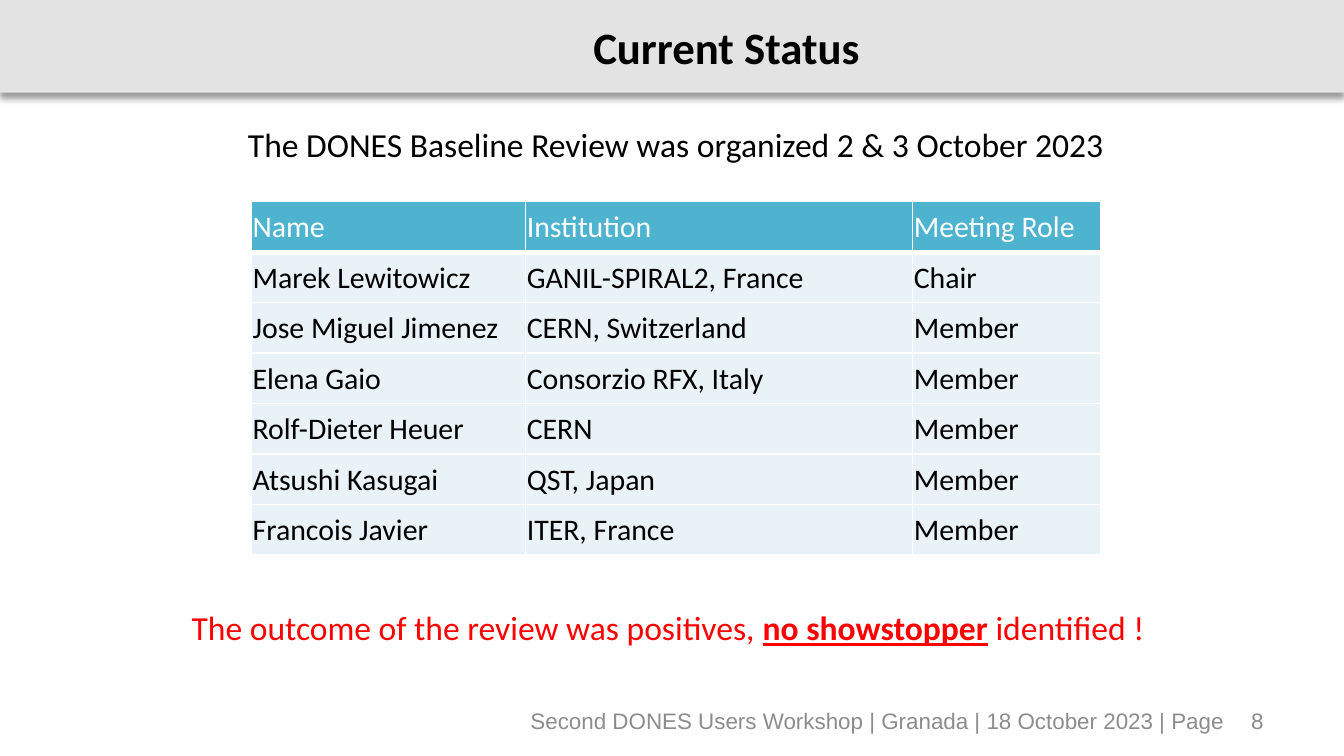
from pptx import Presentation
from pptx.dml.color import RGBColor
from pptx.enum.shapes import MSO_SHAPE
from pptx.enum.text import MSO_ANCHOR, PP_ALIGN
from pptx.oxml import parse_xml
from pptx.oxml.ns import nsdecls
from pptx.util import Inches, Pt

LEFT, CENTER, RIGHT = PP_ALIGN.LEFT, PP_ALIGN.CENTER, PP_ALIGN.RIGHT
TOP, MIDDLE = MSO_ANCHOR.TOP, MSO_ANCHOR.MIDDLE
RECTANGLE = MSO_SHAPE.RECTANGLE
COLORS = {
    "black": "000000", "white": "FFFFFF", "band": "E3E3E3", "footer": "8C8C8C",
    "header": "4EB3CF", "row": "E9F2F6", "outcome": "FF0000",
}


def write(frame, text, size=18, color="black", font="Calibri", align=CENTER,
          anchor=TOP, bold=False, emphasis=None):
    """Fill a one-paragraph frame; the emphasis phrase is bold and underlined."""
    frame.word_wrap = True
    frame.vertical_anchor = anchor
    paragraph = frame.paragraphs[0]
    paragraph.alignment = align
    before, phrase, after = text.partition(emphasis) if emphasis else (text, "", "")
    for part in filter(None, (before, phrase, after)):
        run = paragraph.add_run()
        run.text = part
        run.font.name = font
        run.font.size = Pt(size)
        run.font.color.rgb = RGBColor.from_string(COLORS[color])
        run.font.bold = bold or part == phrase
        run.font.underline = part == phrase


def add_border(cell, side, width):
    """Insert one white cell border; sides go in the order L, R, T, B."""
    properties = cell._tc.get_or_add_tcPr()
    line = parse_xml(
        f'<a:ln{side} {nsdecls("a")} w="{Pt(width)}"><a:solidFill>'
        f'<a:srgbClr val="{COLORS["white"]}"/></a:solidFill></a:ln{side}>')
    properties.insert("LRTB".index(side), line)


# Slide in 16:9
prs = Presentation()
prs.slide_width = Inches(10)
prs.slide_height = Inches(10 * 9 / 16)
slide = prs.slides.add_slide(prs.slide_layouts[5])

# Title band with a soft shadow, placed behind the title
band = slide.shapes.add_shape(RECTANGLE, 0, 0, prs.slide_width, Inches(0.69))
band.fill.solid()
band.fill.fore_color.rgb = RGBColor.from_string(COLORS["band"])
band.line.fill.background()
band.shadow.inherit = False
effects = band._element.spPr.find("{*}effectLst")
effects.append(parse_xml(
    f'<a:outerShdw {nsdecls("a")} blurRad="{Pt(4)}" dist="{Pt(3)}" dir="5400000" '
    f'algn="t" rotWithShape="0"><a:srgbClr val="{COLORS["black"]}">'
    '<a:alpha val="40000"/></a:srgbClr></a:outerShdw>'))
slide.shapes._spTree.insert(2, band._element)

# Title
title = slide.shapes.title
title.left, title.top = Inches(2.32), Inches(-0.02)
title.width, title.height = Inches(6.17), Inches(0.73)
write(title.text_frame, "Current Status", size=24, bold=True, anchor=MIDDLE)

# Statements and footer
footer_style = {"size": 12, "font": "Arial", "color": "footer", "anchor": MIDDLE}
texts = [
    ((3.47, 5.21, 6.12, 0.3),
     "Second DONES Users Workshop | Granada | 18 October 2023 | Page", footer_style),
    ((7.17, 5.21, 2.33, 0.3), "8", {**footer_style, "align": RIGHT}),
    ((0.5, 0.87, 9.06, 0.4),
     "The DONES Baseline Review was organized 2 & 3 October 2023", {}),
    ((0.44, 4.47, 9.06, 0.4),
     "The outcome of the review was positives, no showstopper identified !",
     {"color": "outcome", "emphasis": "no showstopper"}),
]
for place, text, style in texts:
    box = slide.shapes.add_textbox(*map(Inches, place))
    write(box.text_frame, text, **style)

# Review panel table; the table style draws the inner borders of the body
panel = [
    ("Name", "Institution", "Meeting Role"),
    ("Marek Lewitowicz", "GANIL-SPIRAL2, France", "Chair"),
    ("Jose Miguel Jimenez", "CERN, Switzerland", "Member"),
    ("Elena Gaio", "Consorzio RFX, Italy", "Member"),
    ("Rolf-Dieter Heuer", "CERN", "Member"),
    ("Atsushi Kasugai", "QST, Japan", "Member"),
    ("Francois Javier", "ITER, France", "Member"),
]
table = slide.shapes.add_table(len(panel), 3, Inches(1.87), Inches(1.5),
                               Inches(6.32), Inches(2.63)).table
table.first_row = False
table.horz_banding = False
for column, width in zip(table.columns, (2.04, 2.88, 1.4)):
    column.width = Inches(width)
for r, member in enumerate(panel):
    is_header = r == 0
    for c, entry in enumerate(member):
        cell = table.cell(r, c)
        cell.margin_left = cell.margin_right = cell.margin_top = Inches(0.01)
        cell.margin_bottom = 0
        cell.vertical_anchor = MIDDLE
        cell.fill.solid()
        cell.fill.fore_color.rgb = RGBColor.from_string(
            COLORS["header" if is_header else "row"])
        if is_header:
            for side in "LRTB":
                add_border(cell, side, 3 if side == "B" else 1)
        write(cell.text_frame, entry, size=16, align=LEFT, anchor=None,
              color="white" if is_header else "black")

prs.save("out.pptx")
